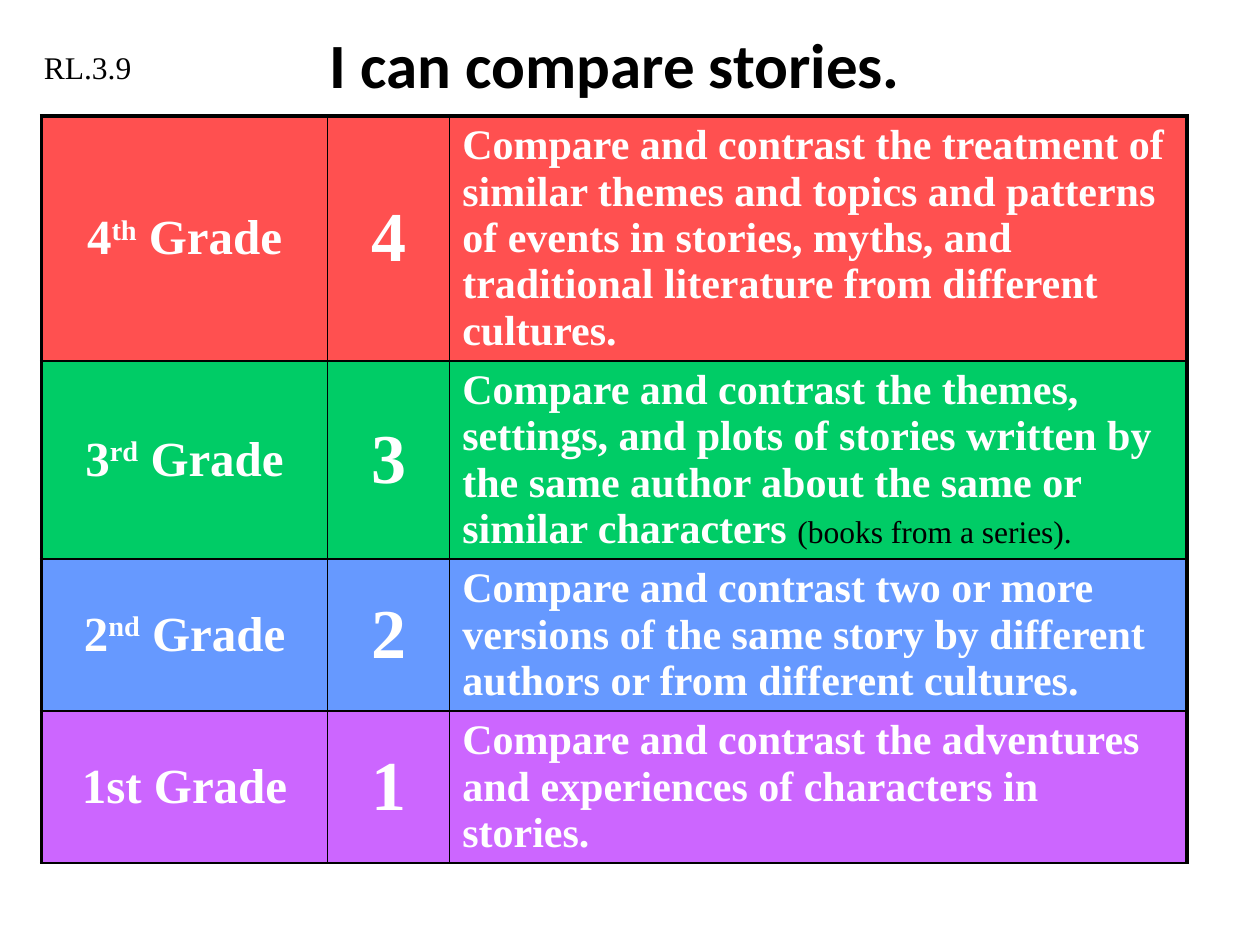
from lxml.etree import fromstring
from pptx import Presentation
from pptx.dml.color import RGBColor
from pptx.enum.text import MSO_ANCHOR as Anchor, PP_ALIGN as Align
from pptx.util import Inches, Pt

SERIF = "Times New Roman"
NS = "http://schemas.openxmlformats.org/drawingml/2006/main"


def hue(code):
    return RGBColor.from_string(code)


def add_run(para, text, size, tint="FFFFFF", bold=True, face=SERIF, lift=0):
    run = para.add_run()
    run.text = text
    font = run.font
    font.size, font.bold, font.name = Pt(size), bold, face
    font.color.rgb = hue(tint)
    if lift:
        run._r.get_or_add_rPr().set("baseline", str(lift * 1000))


# Slide, on a grid of 100 columns and 75 rows
deck = Presentation()
deck.slide_width, deck.slide_height = Inches(10), Inches(7.5)
col, row = deck.slide_width / 100, deck.slide_height / 75
slide = deck.slides.add_slide(deck.slide_layouts[5])

# Title
title = slide.shapes.title
title.left, title.top = int(1.7 * col), 0
title.width, title.height = int(94.2 * col), int(10 * row)
title.text_frame.vertical_anchor = Anchor.MIDDLE
para = title.text_frame.paragraphs[0]
para.alignment = Align.CENTER
add_run(para, "I can compare stories.", 36, "000000", face="Calibri")

# Grade levels: number, ending, raised ending, fill, height, goal, note
grades = [
    ("4", "th", 30, "FF5050", 11, "Compare and contrast the treatment of similar "
     "themes and topics and patterns of events in stories, myths, and "
     "traditional literature from different cultures.", ""),
    ("3", "rd", 30, "00CC66", 13, "Compare and contrast the themes, settings, and "
     "plots of stories written by the same author about the same or similar "
     "characters ", "(books from a series)."),
    ("2", "nd", 30, "6699FF", 11, "Compare and contrast two or more versions of the "
     "same story by different authors or from different cultures.", ""),
    ("1", "st", 0, "CC66FF", 11, "Compare and contrast the adventures and "
     "experiences of characters in stories.", ""),
]

# Table frame
frame = slide.shapes.add_table(4, 3, int(3.3 * col), int(9.2 * row),
                               int(90.8 * col), int(64 * row))
table = frame.table
for i, wide in enumerate((22.7, 9.7, 58.5)):
    table.columns[i].width = int(wide * col)

# Line widths: down the columns, and across the rows for each column
down = (2.25, 1, 1, 2.25)
left = (2.25, 1.5, 1, 1, 1.5)
across = (left, left, (2.25, 1.5, 1.5, 1.5, 1.5))

# Table cells
for r, (num, end, lift, fill, tall, goal, note) in enumerate(grades):
    table.rows[r].height = int(tall * row)
    cells = [table.cell(r, c) for c in range(3)]
    paras = [cell.text_frame.paragraphs[0] for cell in cells]
    paras[0].alignment = paras[1].alignment = Align.CENTER

    if lift:
        add_run(paras[0], num, 28)
        add_run(paras[0], end, 28, lift=lift)
        add_run(paras[0], " Grade", 28)
    else:
        add_run(paras[0], num + end + " Grade", 28)
    add_run(paras[1], num, 40)
    add_run(paras[2], goal, 24)
    if note:
        add_run(paras[2], note, 18, "000000", False)

    for c, cell in enumerate(cells):
        cell.vertical_anchor = Anchor.MIDDLE
        cell.fill.solid()
        cell.fill.fore_color.rgb = hue(fill)
        sides = zip("LRTB", (down[c], down[c + 1], across[c][r], across[c][r + 1]))
        for i, (side, wide) in enumerate(sides):
            cell._tc.get_or_add_tcPr().insert(i, fromstring(
                f'<a:ln{side} xmlns:a="{NS}" w="{Pt(wide)}"><a:solidFill>'
                f'<a:srgbClr val="000000"/></a:solidFill></a:ln{side}>'))
frame.height = int(64 * row)

# Standard code
code = slide.shapes.add_textbox(int(2.5 * col), int(3.3 * row),
                                int(14.2 * col), int(4 * row))
code.text_frame.word_wrap = True
add_run(code.text_frame.paragraphs[0], "RL.3.9", 18, "000000", False)

deck.save("out.pptx")
